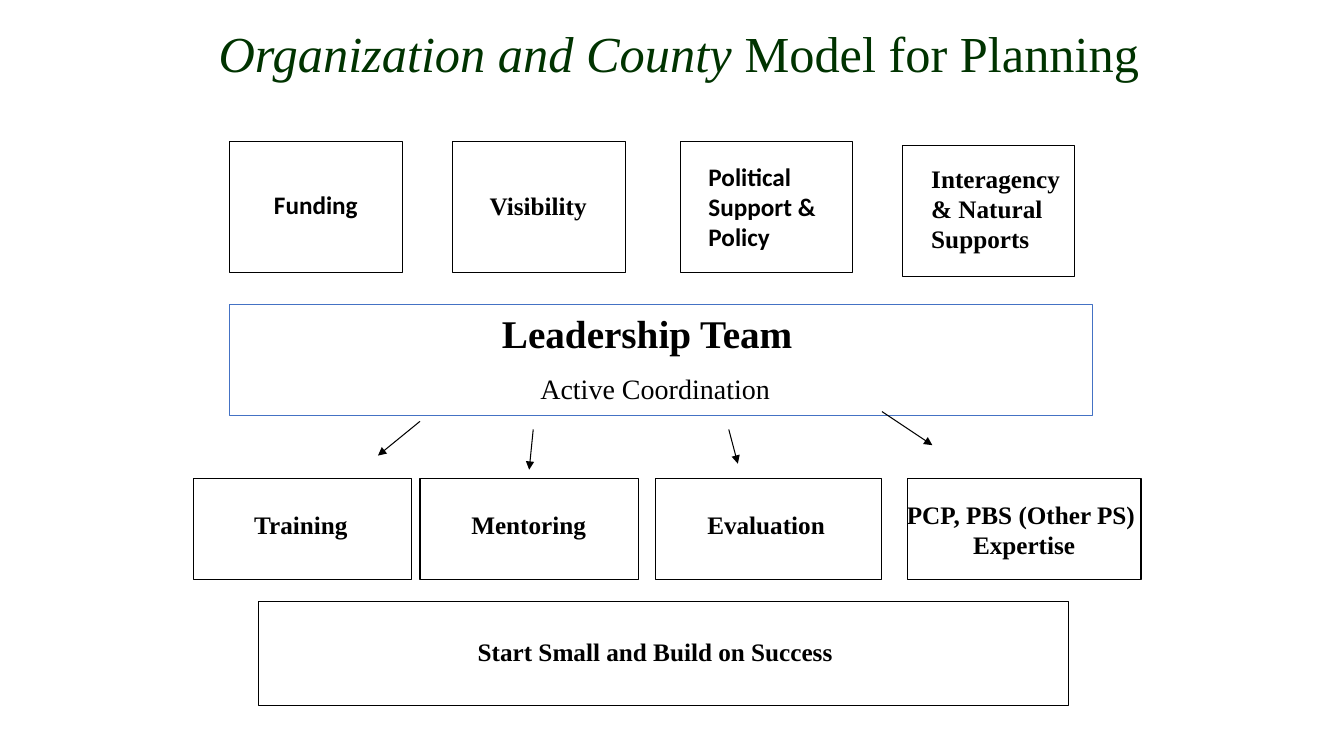
"""Build the organization and county planning model slide."""
from dataclasses import dataclass

from lxml.etree import SubElement
from pptx import Presentation
from pptx.dml.color import RGBColor
from pptx.enum.shapes import MSO_CONNECTOR, MSO_SHAPE
from pptx.enum.text import MSO_ANCHOR, MSO_AUTO_SIZE, PP_ALIGN
from pptx.oxml.ns import qn
from pptx.shapes.autoshape import Shape
from pptx.slide import Slide
from pptx.util import Inches, Pt

BLACK = RGBColor(0x00, 0x00, 0x00)
BLUE = RGBColor(0x44, 0x72, 0xC4)
GREEN = RGBColor(0x00, 0x33, 0x00)
SERIF = "Times New Roman"
SANS = "Calibri"

SLIDE_WIDTH, SLIDE_HEIGHT = Inches(13.333), Inches(7.5)
COLUMNS, ROWS = 160, 90

SUPPORT_ROW, SUPPORT_WIDTH, SUPPORT_HEIGHT = 16.8, 20.52, 15.6
TASK_ROW, TASK_HEIGHT = 57, 12


@dataclass(frozen=True)
class Area:
    left: float
    top: float
    width: float
    height: float


@dataclass(frozen=True)
class Box:
    area: Area
    color: RGBColor = BLACK
    weight: float = 0.75


@dataclass(frozen=True)
class Label:
    text: str
    area: Area
    size: int = 18
    font: str = SERIF
    bold: bool = True
    align: PP_ALIGN = PP_ALIGN.LEFT
    wrap: bool = True
    color: RGBColor = BLACK


@dataclass(frozen=True)
class Arrow:
    start: tuple[float, float]
    end: tuple[float, float]


SUPPORT_BOXES = [
    Box(Area(left, top, SUPPORT_WIDTH, SUPPORT_HEIGHT), weight=0.5)
    for left, top in (
        (27.36, SUPPORT_ROW),
        (53.88, SUPPORT_ROW),
        (81, SUPPORT_ROW),
        (107.4, SUPPORT_ROW + 0.48),
    )
]
TASK_BOXES = [
    Box(Area(left, TASK_ROW, width, TASK_HEIGHT))
    for left, width in ((23, 26), (50, 26), (78, 27))
]
TEAM_BOX = Box(Area(27.36, 36.24, 102.72, 13.2), BLUE, 0.5)
SUCCESS_BOX = Box(Area(30.72, 71.64, 96.48, 12.36))
EXPERTISE_BOX = Box(Area(108, TASK_ROW, 27.84, TASK_HEIGHT))
EXPERTISE_LABEL = Label("PCP, PBS (Other PS) \nExpertise", EXPERTISE_BOX.area,
                        align=PP_ALIGN.CENTER, wrap=False)

TITLE = Label("Organization and County ", Area(24.84, 2.04, 113.52, 8.52),
              size=36, bold=False, wrap=False, color=GREEN)
TITLE_ENDING = "Model for Planning"

LABELS = [
    Label("Funding", Area(31.44, 21.96, 12.48, 4.8), font=SANS, wrap=False),
    Label("Visibility", Area(57.12, 22.08, 14.04, 4.92)),
    Label("Political Support & Policy", Area(83.16, 18.6, 20.52, 12.12), font=SANS),
    Label("Interagency & Natural Supports", Area(109.68, 18.84, 19.68, 12.12)),
    Label("Leadership Team", Area(47.04, 36.24, 60, 6.84), size=28,
          align=PP_ALIGN.CENTER),
    Label("Active Coordination", Area(59.52, 43.68, 36.96, 5.16), size=20,
          bold=False, align=PP_ALIGN.CENTER),
    Label("Start Small and Build on Success", Area(42.48, 75.12, 71.04, 4.8),
          align=PP_ALIGN.CENTER),
] + [
    Label(text, Area(left, TASK_ROW + 3, width, 4.8), align=PP_ALIGN.CENTER)
    for text, left, width in (
        ("Training", 24.84, 21.96),
        ("Mentoring", 51.96, 21.96),
        ("Evaluation", 78.72, 24.96),
    )
]

ARROWS = [
    Arrow((50, 50.16), (45, 54.24)),
    Arrow((63.48, 51.12), (63, 55.92)),
    Arrow((86.76, 51.12), (87.84, 55.2)),
    Arrow((105, 49), (111, 53)),
]


def across(columns: float) -> int:
    """Turn grid columns into a length."""
    return round(SLIDE_WIDTH * columns / COLUMNS)


def down(rows: float) -> int:
    """Turn grid rows into a length."""
    return round(SLIDE_HEIGHT * rows / ROWS)


def place(area: Area) -> tuple[int, int, int, int]:
    """Return left, top, width and height of an area."""
    return across(area.left), down(area.top), across(area.width), down(area.height)


def draw_box(page: Slide, box: Box) -> Shape:
    """Draw an outlined rectangle without fill."""
    shape = page.shapes.add_shape(MSO_SHAPE.RECTANGLE, *place(box.area))
    shape.shadow.inherit = False
    shape.fill.background()
    shape.line.color.rgb = box.color
    shape.line.width = Pt(box.weight)
    return shape


def write(shape: Shape, label: Label) -> None:
    """Fill a shape with the formatted text of a label."""
    frame = shape.text_frame
    frame.text = label.text
    frame.word_wrap = label.wrap
    for para in frame.paragraphs:
        para.alignment = label.align
        para.font.size = Pt(label.size)
        for span in para.runs:
            span.font.name = label.font
            span.font.size = Pt(label.size)
            span.font.bold = label.bold
            span.font.color.rgb = label.color


def draw_label(page: Slide, label: Label) -> Shape:
    """Draw a label as a text box that grows with its text."""
    shape = page.shapes.add_textbox(*place(label.area))
    write(shape, label)
    shape.text_frame.auto_size = MSO_AUTO_SIZE.SHAPE_TO_FIT_TEXT
    return shape


def draw_title(page: Slide) -> None:
    """Draw the title with an italic beginning and an upright ending."""
    para = draw_label(page, TITLE).text_frame.paragraphs[0]
    beginning = para.runs[0]
    beginning.font.italic = True
    ending = para.add_run()
    ending.text = TITLE_ENDING
    ending.font.name = TITLE.font
    ending.font.size = Pt(TITLE.size)
    ending.font.color.rgb = TITLE.color


def draw_arrow(page: Slide, arrow: Arrow) -> None:
    """Draw a thin black line with a triangle at its end."""
    (left, top), (right, bottom) = arrow.start, arrow.end
    line = page.shapes.add_connector(MSO_CONNECTOR.STRAIGHT, across(left), down(top),
                                     across(right), down(bottom))
    line.line.color.rgb = BLACK
    line.line.width = Pt(0.75)
    SubElement(line.line._get_or_add_ln(), qn("a:tailEnd"), type="triangle")
    SubElement(line._element.spPr, qn("a:effectLst"))


def main() -> None:
    """Build and save the slide."""
    deck = Presentation()
    deck.slide_width, deck.slide_height = SLIDE_WIDTH, SLIDE_HEIGHT
    page = deck.slides.add_slide(deck.slide_layouts[6])
    draw_title(page)
    for box in [*SUPPORT_BOXES, TEAM_BOX, *TASK_BOXES, SUCCESS_BOX]:
        draw_box(page, box)
    expertise = draw_box(page, EXPERTISE_BOX)
    write(expertise, EXPERTISE_LABEL)
    expertise.text_frame.vertical_anchor = MSO_ANCHOR.MIDDLE
    for label in LABELS:
        draw_label(page, label)
    for arrow in ARROWS:
        draw_arrow(page, arrow)
    deck.save("out.pptx")


if __name__ == "__main__":
    main()
